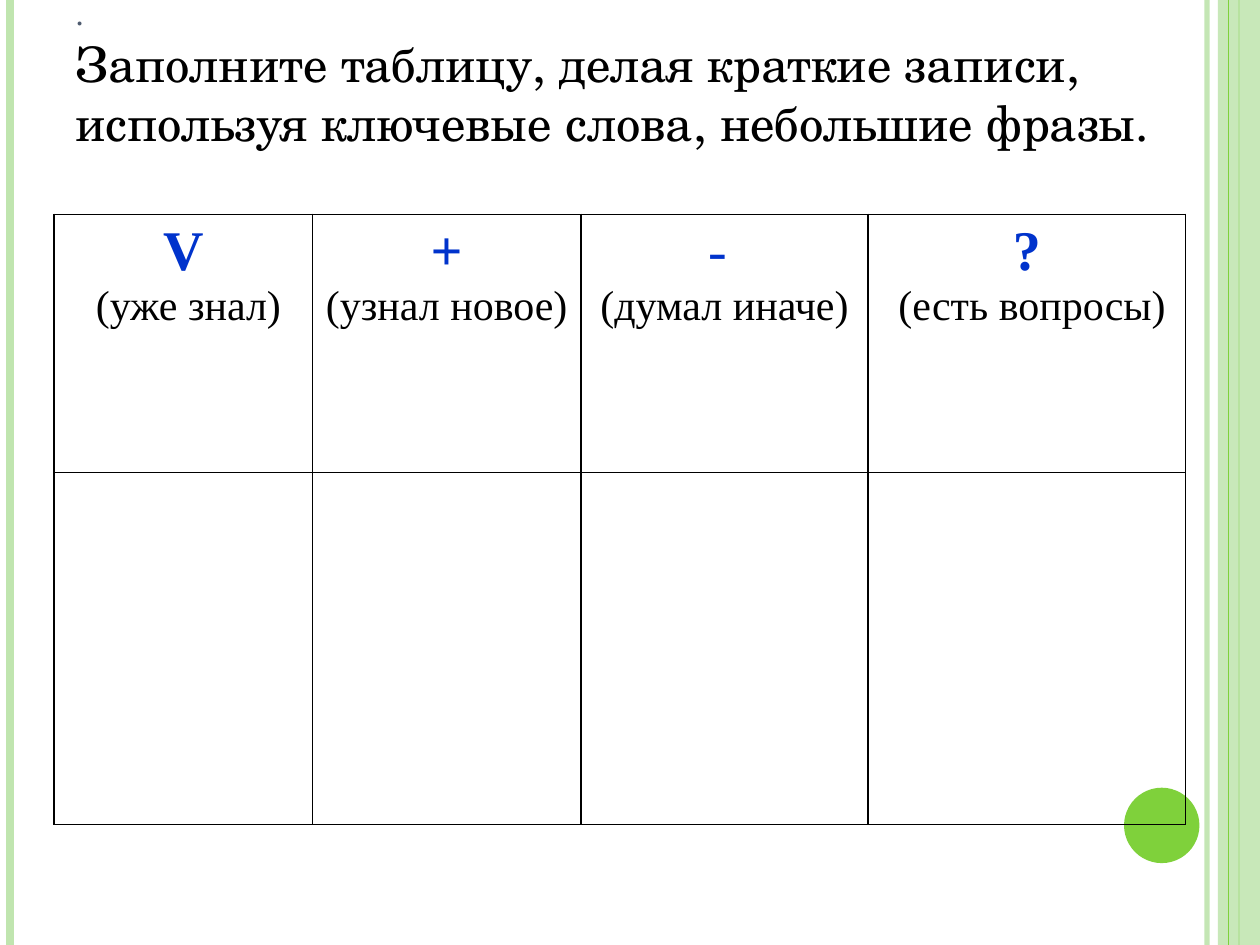
"""Build a slide with a four-column reading-notes table."""
from lxml import etree
from pptx import Presentation
from pptx.dml.color import RGBColor
from pptx.enum.shapes import MSO_CONNECTOR, MSO_SHAPE
from pptx.enum.text import MSO_ANCHOR, PP_ALIGN
from pptx.oxml import parse_xml
from pptx.oxml.ns import nsdecls, qn
from pptx.util import Cm, Pt

STRAIGHT = MSO_CONNECTOR.STRAIGHT
RECTANGLE, OVAL = MSO_SHAPE.RECTANGLE, MSO_SHAPE.OVAL
BOTTOM = MSO_ANCHOR.BOTTOM
CENTER = PP_ALIGN.CENTER

COLORS = {
    "pale": "C0E5AF",
    "green": "7FD13B",
    "slate": "4E5B6F",
    "black": "000000",
    "blue": "0033CC",
}
TITLE_FONT, TABLE_FONT = "TeX Gyre Schola", "Times New Roman"
WIDTH, HEIGHT = 25.4, 19.05
COLUMN_WIDTHS = (5.21, 5.41, 5.79, 6.4)
ROW_HEIGHTS = (5.21, 7.09)
HEADERS = (
    ("V", " (уже знал)", True),
    ("+", "(узнал новое)", True),
    ("- ", "(думал иначе)", False),
    ("?", " (есть вопросы)", True),
)


def rgb(name):
    return RGBColor.from_string(COLORS[name])


def set_alpha(color_format_owner, percent):
    color = next(color_format_owner.iter(qn("a:srgbClr")))
    etree.SubElement(color, qn("a:alpha")).set("val", str(percent * 1000))


def add_stripe(slide, x, color, weight, alpha=100):
    line = slide.shapes.add_connector(STRAIGHT, Cm(x), Cm(0), Cm(x), Cm(HEIGHT))
    line.line.color.rgb = rgb(color)
    line.line.width = Pt(weight)
    properties = line._element.spPr
    if alpha < 100:
        set_alpha(properties, alpha)
    etree.SubElement(properties, qn("a:effectLst"))


def add_filled_shape(slide, kind, left, top, width, height, color, alpha=100):
    shape = slide.shapes.add_shape(kind, Cm(left), Cm(top), Cm(width), Cm(height))
    shape.shadow.inherit = False
    shape.fill.solid()
    shape.fill.fore_color.rgb = rgb(color)
    shape.line.fill.background()
    if alpha < 100:
        set_alpha(shape._element.spPr, alpha)


def style_font(font, name, size, color, bold=False):
    font.name = name
    font.size = Pt(size)
    font.color.rgb = rgb(color)
    font.bold = bold


def add_title(slide):
    box = slide.shapes.add_textbox(Cm(1.27), Cm(0.58), Cm(22.86), Cm(2.59))
    frame = box.text_frame
    frame.word_wrap = True
    frame.vertical_anchor = BOTTOM
    paragraph = frame.paragraphs[0]
    dot = paragraph.add_run()
    dot.text = "."
    style_font(dot.font, TITLE_FONT, 22.5, "slate")
    dot._r.get_or_add_rPr().set("cap", "small")
    paragraph.add_line_break()
    task = paragraph.add_run()
    task.text = ("Заполните таблицу, делая краткие записи, "
                 "используя ключевые слова, небольшие фразы.")
    style_font(task.font, TITLE_FONT, 27.9, "black")


def format_cell(cell):
    properties = cell._tc.get_or_add_tcPr()
    for side in ("lnL", "lnR", "lnT", "lnB"):
        properties.append(parse_xml(
            f'<a:{side} {nsdecls("a")} w="{Pt(1)}"><a:solidFill>'
            f'<a:srgbClr val="{COLORS["black"]}"/></a:solidFill></a:{side}>'))
    cell.fill.background()


def fill_header(cell, symbol, label, bold):
    frame = cell.text_frame
    for paragraph, text in ((frame.paragraphs[0], symbol),
                            (frame.add_paragraph(), label)):
        paragraph.text = text
        paragraph.alignment = CENTER
    style_font(frame.paragraphs[0].font, TABLE_FONT, 32, "blue", bold)
    style_font(frame.paragraphs[1].font, TABLE_FONT, 24, "black")


def add_notes_table(slide):
    table = slide.shapes.add_table(
        len(ROW_HEIGHTS), len(COLUMN_WIDTHS), Cm(1.09), Cm(4.32),
        Cm(sum(COLUMN_WIDTHS)), Cm(sum(ROW_HEIGHTS))).table
    table.first_row = table.horz_banding = False
    for column, width in zip(table.columns, COLUMN_WIDTHS):
        column.width = Cm(width)
    for row, height in zip(table.rows, ROW_HEIGHTS):
        row.height = Cm(height)
    for cell in table.iter_cells():
        format_cell(cell)
    for cell, header in zip(table.rows[0].cells, HEADERS):
        fill_header(cell, *header)


def main():
    presentation = Presentation()
    presentation.slide_width, presentation.slide_height = Cm(WIDTH), Cm(HEIGHT)
    slide = presentation.slides.add_slide(presentation.slide_layouts[6])
    add_stripe(slide, 24.33, "pale", 3, 93)
    add_stripe(slide, 0.21, "pale", 4.5)
    add_stripe(slide, 24.98, "green", 1.5)
    add_filled_shape(slide, RECTANGLE, 24.55, 0, 0.85, HEIGHT, "pale", 87)
    add_stripe(slide, 24.77, "green", 0.75)
    add_filled_shape(slide, OVAL, 22.66, 15.88, 1.52, 1.52, "green")
    add_title(slide)
    add_notes_table(slide)
    presentation.save("out.pptx")


if __name__ == "__main__":
    main()
